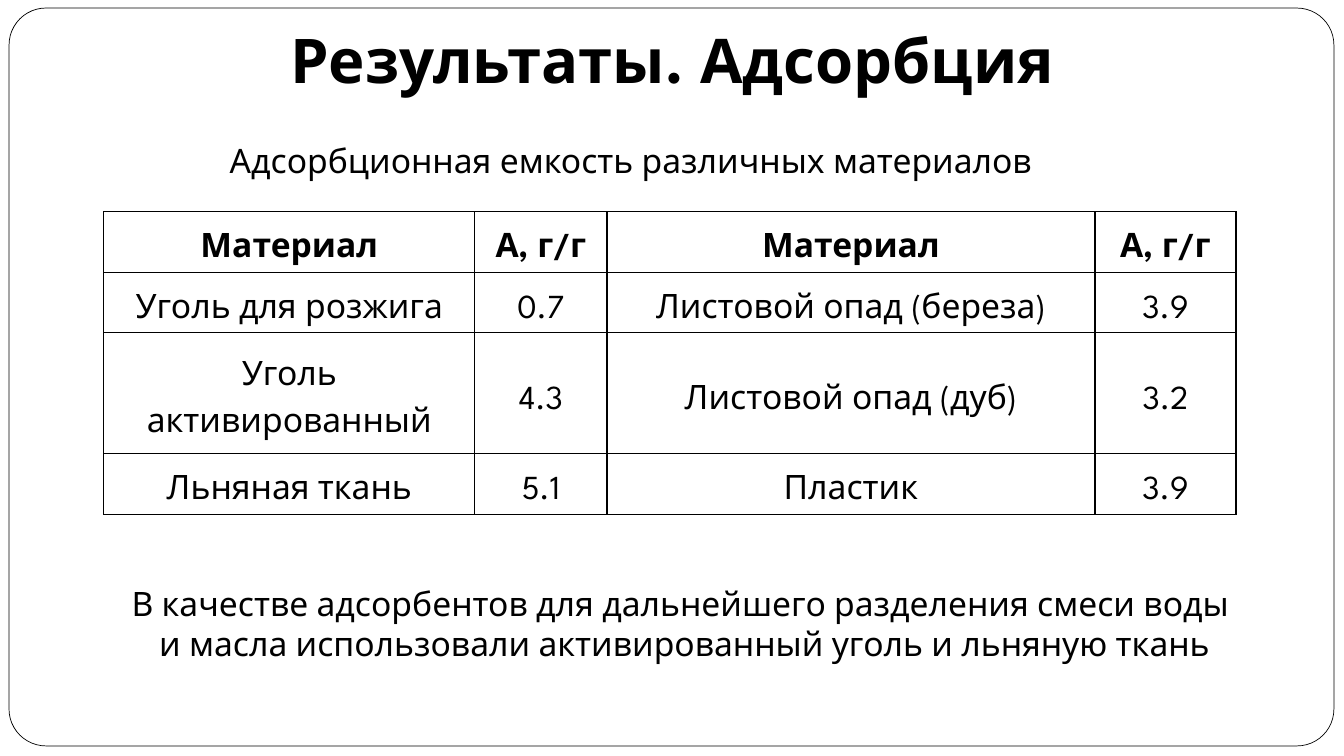
from lxml import etree
from pptx import Presentation
from pptx import util as u
from pptx.dml.color import RGBColor
from pptx.enum import shapes, text
from pptx.oxml import ns

FONT = "League Spartan"
COLORS = {"ink": "000000", "paper": "FFFFFF"}
COLS = [3.68, 1.31, 4.84, 1.4]
ROWS = [0.6, 0.6, 1.2, 0.6]
DATA = [
    ["Материал", "А, г/г", "Материал", "А, г/г"],
    ["Уголь для розжига", "0.7", "Листовой опад (береза)", "3.9"],
    ["Уголь активированный", "4.3", "Листовой опад (дуб)", "3.2"],
    ["Льняная ткань", "5.1", "Пластик", "3.9"],
]


def color(name):
    return RGBColor.from_string(COLORS[name])


def write(frame, words, size=24, bold=False, align="CENTER", space=None):
    par = frame.paragraphs[0]
    par.text = words
    par.alignment = getattr(text.PP_ALIGN, align)
    if space:
        par.line_spacing = space
    for run in par.runs:
        run.font.name = FONT
        run.font.size = u.Pt(size)
        run.font.bold = bold
        run.font.color.rgb = color("ink")


def add_text(slide, box, words, wrap=False, **style):
    frame = slide.shapes.add_textbox(*map(u.Inches, box)).text_frame
    frame.word_wrap = wrap
    frame.auto_size = text.MSO_AUTO_SIZE.SHAPE_TO_FIT_TEXT
    write(frame, words, **style)


def add_frame(slide, box):
    kind = shapes.MSO_SHAPE.ROUNDED_RECTANGLE
    shape = slide.shapes.add_shape(kind, *map(u.Inches, box))
    shape.adjustments[0] = 0.05
    shape.shadow.inherit = False
    shape.fill.solid()
    shape.fill.fore_color.rgb = color("paper")
    shape.line.color.rgb = color("ink")
    shape.line.width = u.Pt(0.5)


def add_edges(cell):
    props = cell._tc.get_or_add_tcPr()
    for side in ("L", "R", "T", "B"):
        edge = etree.SubElement(props, ns.qn(f"a:ln{side}"), w=str(u.Pt(1)))
        fill = etree.SubElement(edge, ns.qn("a:solidFill"))
        etree.SubElement(fill, ns.qn("a:srgbClr"), val=COLORS["ink"])


def add_grid(slide, left, top):
    box = map(u.Inches, (left, top, sum(COLS), sum(ROWS)))
    table = slide.shapes.add_table(len(ROWS), len(COLS), *box).table
    table.horz_banding = False
    table.first_row = False
    for col, width in zip(table.columns, COLS):
        col.width = u.Inches(width)
    for r, (height, words) in enumerate(zip(ROWS, DATA)):
        table.rows[r].height = u.Inches(height)
        for c, word in enumerate(words):
            cell = table.cell(r, c)
            cell.margin_left = cell.margin_right = u.Inches(0.07)
            cell.margin_top = cell.margin_bottom = 0
            cell.vertical_anchor = text.MSO_ANCHOR.MIDDLE
            write(cell.text_frame, word, bold=r == 0, space=1.5)
            # Borders come before the fill in the cell's XML
            add_edges(cell)
            cell.fill.background()


def main():
    deck = Presentation()
    deck.slide_width = u.Inches(13.33)
    deck.slide_height = u.Inches(7.5)
    slide = deck.slides.add_slide(deck.slide_layouts[6])

    # Frame and title
    add_frame(slide, (0.09, 0.08, 13.14, 7.32))
    add_text(slide, (1.67, 0.12, 10, 0.85), "Результаты. Адсорбция",
             wrap=True, size=44, bold=True, space=1.07)

    # Table with its caption
    add_grid(slide, 1.03, 2.1)
    add_text(slide, (2.18, 1.34, 8.51, 0.5),
             "Адсорбционная емкость различных материалов", align="LEFT")

    # Conclusion
    add_text(slide, (0.96, 5.73, 11.66, 0.91),
             "В качестве адсорбентов для дальнейшего разделения смеси воды \n"
             "и масла использовали активированный уголь и льняную ткань")

    deck.save("out.pptx")


if __name__ == "__main__":
    main()
